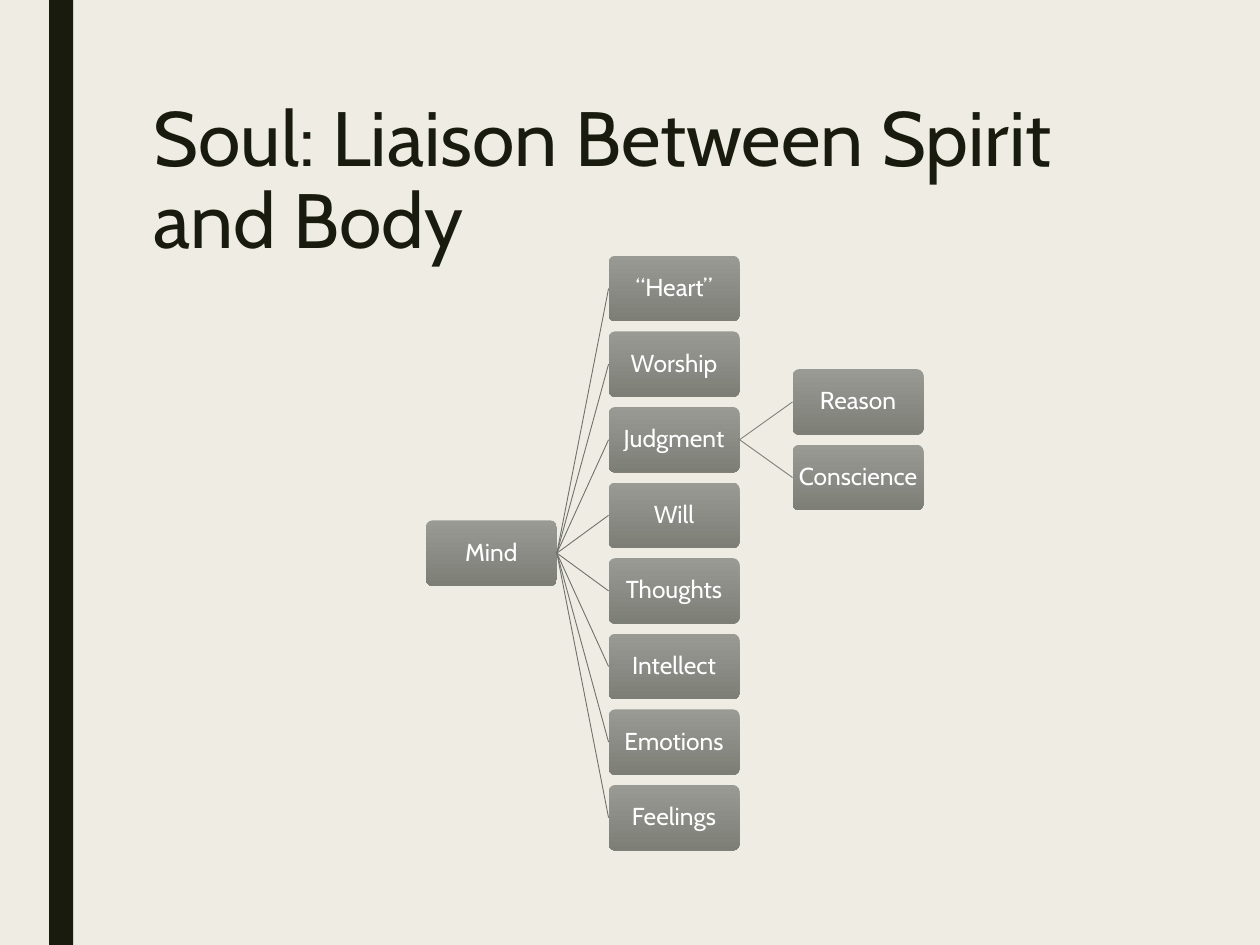
from lxml import etree
from pptx import Presentation
from pptx.dml.color import RGBColor
from pptx.enum.shapes import MSO_CONNECTOR, MSO_SHAPE
from pptx.enum.text import MSO_ANCHOR, PP_ALIGN
from pptx.oxml.ns import qn
from pptx.util import Inches, Pt

RECT, ROUND_RECT = MSO_SHAPE.RECTANGLE, MSO_SHAPE.ROUNDED_RECTANGLE
STRAIGHT = MSO_CONNECTOR.STRAIGHT
TOP, MIDDLE = MSO_ANCHOR.TOP, MSO_ANCHOR.MIDDLE
LEFT, CENTER = PP_ALIGN.LEFT, PP_ALIGN.CENTER
LEFT_SITE, RIGHT_SITE = 1, 3

FONT = "Cabin"
DARK, PAPER, WHITE = "191B0E", "EFEDE3", "FFFFFF"
BOX_TOP, BOX_BOTTOM = "999A94", "7D7E76"
MIND_LINE, JUDGMENT_LINE = "70716B", "7F807A"

BOX_W, BOX_H = 1.04, 0.52
COLUMN_X = [3.38, 4.83, 6.29]
ROW_PITCH = 0.6
CENTER_Y = 4.39

FACULTIES = ["“Heart”", "Worship", "Judgment", "Will",
             "Thoughts", "Intellect", "Emotions", "Feelings"]
JUDGMENT_PARTS = ["Reason", "Conscience"]


def rgb(color):
    return RGBColor.from_string(color)


def set_text(sp, text, size, color, align, anchor, spacing):
    tf = sp.text_frame
    tf.word_wrap = True
    tf.vertical_anchor = anchor
    tf.text = text
    p = tf.paragraphs[0]
    p.alignment = align
    p.line_spacing = spacing
    font = p.runs[0].font
    font.name, font.size = FONT, Pt(size)
    font.color.rgb = rgb(color)


def add_bar(slide):
    sp = slide.shapes.add_shape(RECT, Inches(0.39), 0, Inches(0.19), Inches(7.5))
    sp.shadow.inherit = False
    sp.fill.solid()
    sp.fill.fore_color.rgb = rgb(DARK)
    sp.line.fill.background()


def add_title(slide, text):
    sp = slide.shapes.add_textbox(Inches(1.12), Inches(0.75),
                                  Inches(7.88), Inches(1.62))
    set_text(sp, text, 44, DARK, LEFT, TOP, 0.89)


def add_box(slide, text, x, center_y):
    sp = slide.shapes.add_shape(ROUND_RECT, Inches(x), Inches(center_y - BOX_H / 2),
                                Inches(BOX_W), Inches(BOX_H))
    sp.adjustments[0] = 0.1
    sp.shadow.inherit = False
    sp.line.fill.background()
    sp.fill.gradient()
    sp.fill.gradient_angle = 270
    for stop, color in zip(sp.fill.gradient_stops, (BOX_TOP, BOX_BOTTOM)):
        stop.color.rgb = rgb(color)
    tf = sp.text_frame
    tf.margin_left = tf.margin_right = Inches(0.02)
    tf.margin_top = tf.margin_bottom = Inches(0.02)
    set_text(sp, text, 14, WHITE, CENTER, MIDDLE, 0.9)
    return sp


def add_branch(slide, parent, child, color):
    line = slide.shapes.add_connector(STRAIGHT, 0, 0, 0, 0)
    line.begin_connect(parent, RIGHT_SITE)
    line.end_connect(child, LEFT_SITE)
    line.line.color.rgb = rgb(color)
    line.line.width = Pt(0.5)
    etree.SubElement(line._element.spPr, qn("a:effectLst"))


def add_children(slide, parent, names, x, center_y, color):
    """Stack boxes evenly about center_y, join them to parent, return them by name."""
    first_y = center_y - ROW_PITCH * (len(names) - 1) / 2
    boxes = {}
    for i, name in enumerate(names):
        boxes[name] = add_box(slide, name, x, first_y + i * ROW_PITCH)
        add_branch(slide, parent, boxes[name], color)
    return boxes


def main():
    prs = Presentation()
    prs.slide_width, prs.slide_height = Inches(10), Inches(7.5)
    slide = prs.slides.add_slide(prs.slide_layouts[6])
    slide.background.fill.solid()
    slide.background.fill.fore_color.rgb = rgb(PAPER)

    add_bar(slide)
    add_title(slide, "Soul: Liaison Between Spirit and Body")
    mind = add_box(slide, "Mind", COLUMN_X[0], CENTER_Y)
    faculties = add_children(slide, mind, FACULTIES, COLUMN_X[1], CENTER_Y, MIND_LINE)
    judgment = faculties["Judgment"]
    judgment_y = (judgment.top + judgment.height / 2) / Inches(1)
    add_children(slide, judgment, JUDGMENT_PARTS, COLUMN_X[2], judgment_y, JUDGMENT_LINE)
    prs.save("out.pptx")


if __name__ == "__main__":
    main()
